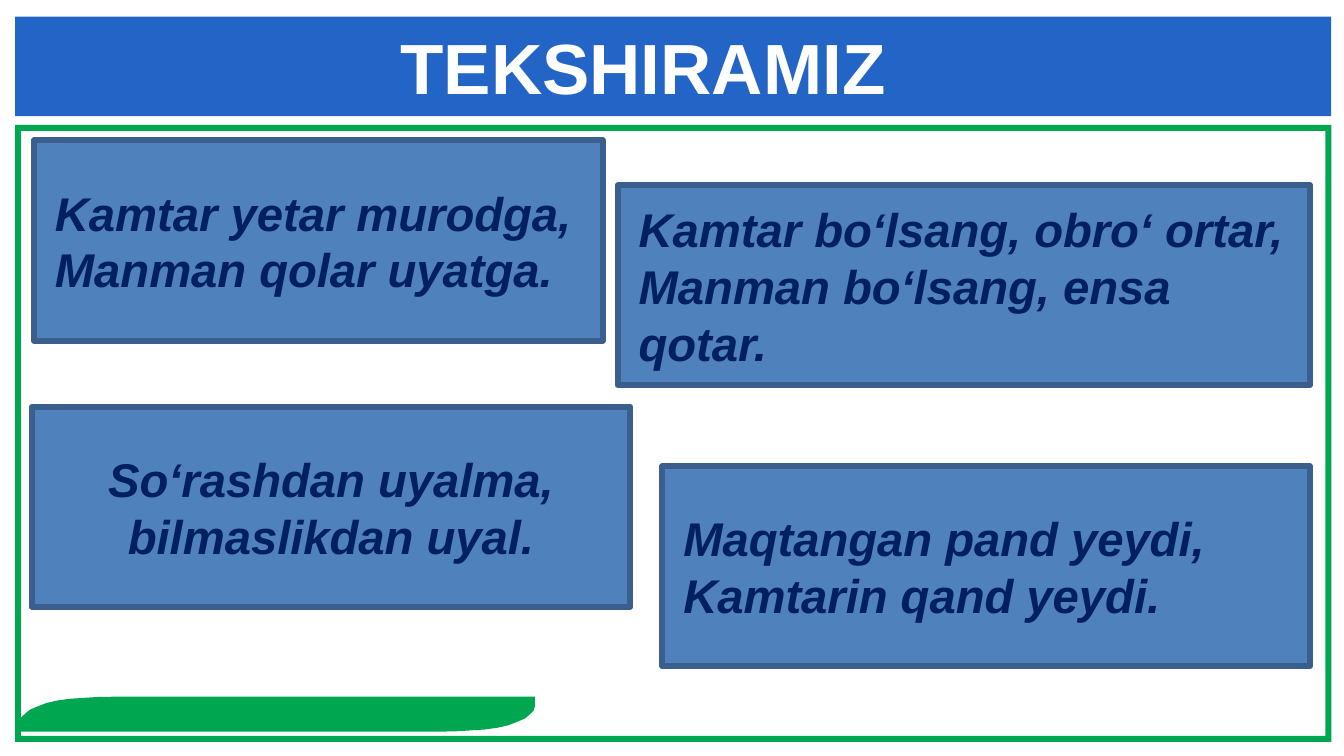
from pptx import Presentation
from pptx import util as u
from pptx.dml.color import RGBColor
from pptx.enum import shapes, text

Pt = u.Pt

WHITE = RGBColor(0xFF, 0xFF, 0xFF)
GREEN = RGBColor(0x00, 0xA6, 0x50)
BANNER_BLUE = RGBColor(0x23, 0x65, 0xC7)
CARD_BLUE = RGBColor(0x4F, 0x81, 0xBD)
CARD_BORDER = RGBColor(0x3A, 0x5F, 0x8C)
NAVY = RGBColor(0x00, 0x20, 0x60)

CARD_HEIGHT = 67.68


class SlideBuilder:
    """Holds the text style and the current slide; lengths are in points."""

    font_name = "Arial"

    def __init__(self, slide):
        self.slide = slide

    def paint(self, shape, fill, border=None):
        shape.shadow.inherit = False
        shape.fill.solid()
        shape.fill.fore_color.rgb = fill
        if border is None:
            shape.line.fill.background()
        else:
            shape.line.color.rgb = border
            shape.line.width = Pt(2)

    def set_words(self, text_frame, words, size, color, align, italic=False):
        text_frame.text = words
        for paragraph in text_frame.paragraphs:
            paragraph.alignment = align
            for run in paragraph.runs:
                font = run.font
                font.name, font.size = self.font_name, Pt(size)
                font.bold, font.italic = True, italic
                font.color.rgb = color

    def preset(self, kind, box, fill, border=None):
        shape = self.slide.shapes.add_shape(kind, *map(Pt, box))
        self.paint(shape, fill, border)
        return shape

    def outline(self, points, fill):
        corners = [(Pt(x), Pt(y)) for x, y in points]
        builder = self.slide.shapes.build_freeform(*corners[0])
        builder.add_line_segments(corners[1:], close=True)
        self.paint(builder.convert_to_shape(), fill)

    def card(self, left, top, width, words, align=text.PP_ALIGN.LEFT):
        box = (left, top, width, CARD_HEIGHT)
        shape = self.preset(shapes.MSO_SHAPE.RECTANGLE, box, CARD_BLUE, CARD_BORDER)
        frame = shape.text_frame
        frame.word_wrap = True
        frame.vertical_anchor = text.MSO_ANCHOR.MIDDLE
        self.set_words(frame, words, 16, NAVY, align, italic=True)

    def title(self, box, words):
        title = self.slide.shapes.title
        title.left, title.top, title.width, title.height = map(Pt, box)
        frame = title.text_frame
        frame.word_wrap = False
        frame.auto_size = text.MSO_AUTO_SIZE.SHAPE_TO_FIT_TEXT
        frame.vertical_anchor = text.MSO_ANCHOR.TOP
        self.set_words(frame, words, 24, WHITE, text.PP_ALIGN.LEFT)
        # Bring the title in front of the banner
        title.element.getparent().append(title.element)


def main():
    presentation = Presentation()
    presentation.slide_width, presentation.slide_height = Pt(454.32), Pt(255.6)
    layout = presentation.slide_layouts.get_by_name("Title Only")
    builder = SlideBuilder(presentation.slides.add_slide(layout))

    # Green frame and blue banner
    frame_width, frame_height = 444.9, 208.6
    frame = builder.preset(
        shapes.MSO_SHAPE.FRAME, (5.1, 42.25, frame_width, frame_height), GREEN)
    frame.adjustments[0] = 2 / frame_height
    builder.preset(
        shapes.MSO_SHAPE.RECTANGLE, (5.1, 5.6, frame_width, 33.65), BANNER_BLUE)

    # Green leaf: the lower half is the upper half turned by 180 degrees
    upper_half = [(180.8, 235.6), (38.2, 235.6), (33.1, 235.7), (28.1, 236),
                  (23.8, 236.3), (19.4, 236.9), (15.8, 237.7), (13, 238.8),
                  (10.1, 240), (8.6, 241.3), (7.2, 242.6), (6.8, 244)]
    lower_half = [(187.6 - x, 483 - y) for x, y in upper_half]
    builder.outline(upper_half + lower_half, GREEN)

    # Proverb cards
    builder.card(208.8, 62.64, 234,
                 "Kamtar bo‘lsang, obro‘ ortar,\nManman bo‘lsang, ensa qotar.")
    builder.card(11.52, 47.52, 192.24,
                 "Kamtar yetar murodga,\nManman qolar uyatga.")
    builder.card(223.92, 157.68, 218.88,
                 "Maqtangan pand yeydi,\nKamtarin qand yeydi.")
    builder.card(10.8, 137.52, 202.32,
                 "So‘rashdan uyalma, bilmaslikdan uyal.", text.PP_ALIGN.CENTER)

    # Title
    builder.title((128.16, 4.32, 180, 36), "TEKSHIRAMIZ")

    presentation.save("out.pptx")


if __name__ == "__main__":
    main()
